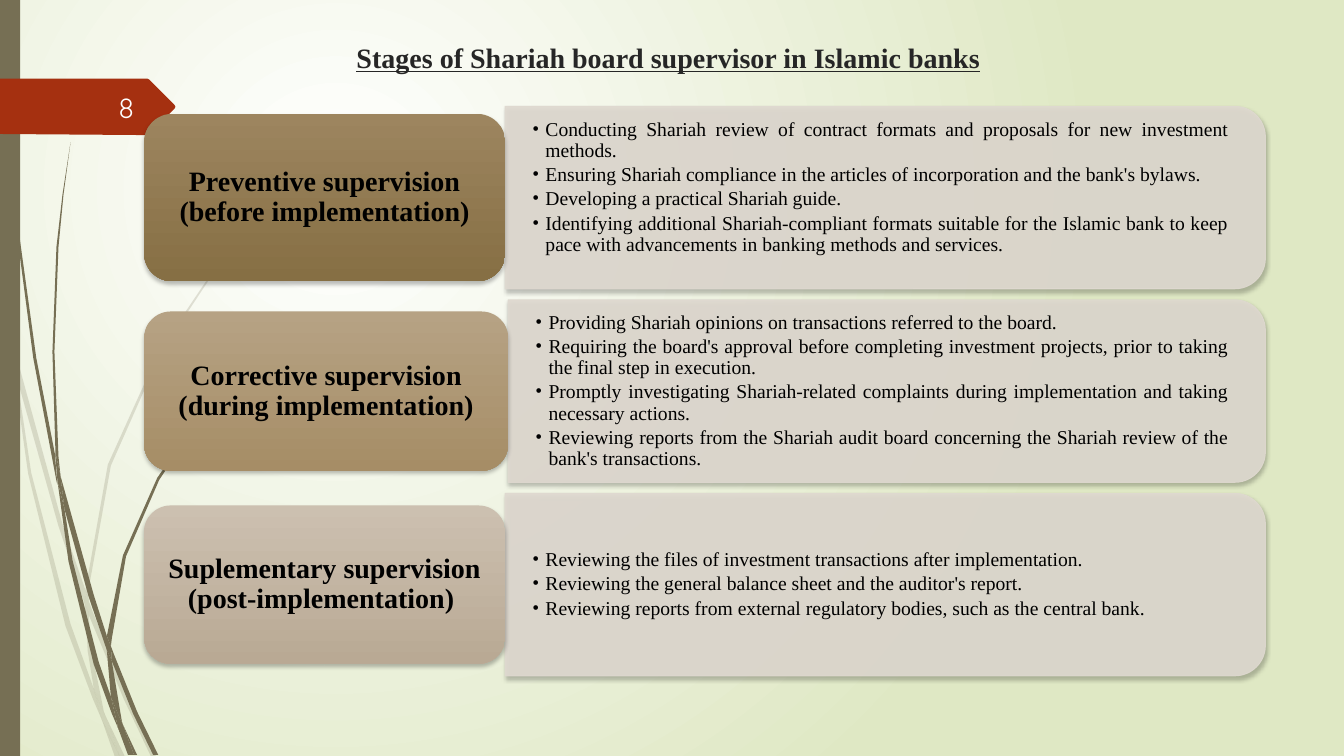
from dataclasses import dataclass
from lxml import etree
from pptx import Presentation
from pptx.dml.color import RGBColor
from pptx.enum.shapes import MSO_SHAPE
from pptx.enum.text import MSO_ANCHOR, PP_ALIGN
from pptx.oxml.ns import qn
from pptx.util import Inches, Pt

RECTANGLE, ROUNDED, TWO_ROUNDED = MSO_SHAPE.RECTANGLE, MSO_SHAPE.ROUNDED_RECTANGLE, MSO_SHAPE.ROUND_2_SAME_RECTANGLE
TOP, MIDDLE = MSO_ANCHOR.TOP, MSO_ANCHOR.MIDDLE
CENTER, RIGHT, JUSTIFY = PP_ALIGN.CENTER, PP_ALIGN.RIGHT, PP_ALIGN.JUSTIFY

BLACK, WHITE = RGBColor(0x00, 0x00, 0x00), RGBColor(0xFF, 0xFF, 0xFF)
PALE_GREEN, OLIVE = RGBColor(0xDF, 0xE8, 0xC4), RGBColor(0x76, 0x6F, 0x54)
RUST, PANEL = RGBColor(0xA5, 0x30, 0x10), RGBColor(0xDF, 0xD9, 0xD0)
NUMBER_WHITE, TITLE_GREY = RGBColor(0xFE, 0xFF, 0xFF), RGBColor(0x26, 0x26, 0x26)
BROWN, DARK_BROWN = RGBColor(0x9D, 0x85, 0x5F), RGBColor(0x86, 0x6F, 0x44)
TAN, DARK_TAN = RGBColor(0xB6, 0xA2, 0x84), RGBColor(0xA6, 0x8D, 0x66)
SAND, DARK_SAND = RGBColor(0xCC, 0xC0, 0xB0), RGBColor(0xB9, 0xA9, 0x94)

SERIF = "Times New Roman"
TITLE_FONT = {"name": SERIF, "size": Pt(20), "bold": True, "underline": True}
NUMBER_FONT = {"name": "Quicksand", "size": Pt(20)}
BADGE_FONT = {"name": SERIF, "size": Pt(20), "bold": True}
BULLET_FONT = {"name": SERIF, "size": Pt(14)}
BADGE_PARAGRAPH = {"alignment": CENTER, "line_spacing": 0.9}
BULLET_PARAGRAPH = {"alignment": JUSTIFY, "line_spacing": 0.9, "space_after": Pt(2.2)}

BADGE_LEFT, PANEL_RIGHT, TEXT_RIGHT = 1.43, 12.55, 12.46
PANEL_HEIGHT, TEXT_HEIGHT = 1.81, 1.63
FIRST_MIDDLE, STAGE_PITCH = 1.96, 1.92
Outline = list[tuple[float, float]]


@dataclass(frozen=True)
class Stage:
    heading: str
    points: list[str]
    badge_width: float
    badge_height: float
    upper: RGBColor
    lower: RGBColor
    bottom_inset: float = 0.14


STAGES = [
    Stage("Preventive supervision (before implementation)", [
        "Conducting Shariah review of contract formats and proposals for new investment methods.",
        "Ensuring Shariah compliance in the articles of incorporation and the bank's bylaws.",
        "Developing a practical Shariah guide.",
        "Identifying additional Shariah-compliant formats suitable for the Islamic bank to keep pace "
        "with advancements in banking methods and services.",
    ], 3.58, 1.66, BROWN, DARK_BROWN, 0.34),
    Stage("Corrective supervision (during implementation)", [
        "Providing Shariah opinions on transactions referred to the board.",
        "Requiring the board's approval before completing investment projects, prior to taking "
        "the final step in execution.",
        "Promptly investigating Shariah-related complaints during implementation and taking necessary actions.",
        "Reviewing reports from the Shariah audit board concerning the Shariah review of the bank's transactions.",
    ], 3.61, 1.58, TAN, DARK_TAN),
    Stage("Suplementary supervision (post-implementation) ", [
        "Reviewing the files of investment transactions after implementation.",
        "Reviewing the general balance sheet and the auditor's report.",
        "Reviewing reports from external regulatory bodies, such as the central bank.",
    ], 3.58, 1.57, SAND, DARK_SAND),
]
PALE_WISPS: list[Outline] = [
    [(0.11, 3.5), (0.09, 3.22), (0, 2.82), (0, 2.99), (0.1, 3.44)],
    [(0.58, 5.22), (0.84, 5.99), (0.85, 5.86), (0.62, 5.2), (0.14, 3.45), (0.17, 3.76)],
    [(0.92, 6.07), (0.88, 5.96), (0.88, 6.1), (1.23, 6.94), (1.5, 7.51), (1.55, 7.51), (1.27, 6.92)],
    [(1.19, 7.51), (1.24, 7.51), (1.05, 7.11)],
    [(0.93, 6.83), (0.7, 6.19), (0.31, 4.69), (0.17, 3.76), (0.11, 3.5), (0.28, 4.7), (0.65, 6.21),
     (0.92, 6.93), (1.01, 7.14), (0.99, 7.07)],
    [(0.84, 5.99), (0.87, 6.46), (0.93, 6.83), (0.96, 6.92), (1.05, 7.11), (1.03, 7.06), (0.91, 6.46),
     (0.88, 6.1), (0.88, 6.08)],
    [(0.88, 5.84), (1.1, 4.62), (1.6, 3.49), (2.29, 2.45), (2.68, 1.98), (2.9, 1.75), (3.12, 1.54), (3.12, 1.53),
     (2.89, 1.75), (2.68, 1.97), (2.28, 2.44), (1.58, 3.48), (1.07, 4.61), (0.85, 5.84), (0.85, 5.86), (0.88, 5.96)],
    [(1.01, 7.14), (1.14, 7.51), (1.19, 7.51)],
    [(0.88, 6.08), (0.88, 6.1), (0.88, 5.96), (0.85, 5.86), (0.84, 5.99)],
    [(0.96, 6.92), (0.93, 6.83), (0.99, 7.07), (1.01, 7.14), (1.19, 7.51), (1.05, 7.11)],
]
DARK_WISPS: list[Outline] = [
    [(0.07, 1.1), (0.17, 2.33), (0.33, 3.55), (0.56, 4.77), (0.57, 4.81), (0.55, 4.57), (0.55, 4.53),
     (0.36, 3.55), (0.19, 2.32), (0.08, 1.09), (0.05, 0.48), (0.04, 0), (0.03, 0), (0.04, 0.48)],
    [(0.88, 5.92), (1.06, 6.45), (1.06, 6.31), (0.93, 5.9), (0.6, 4.72), (0.64, 5.05)],
    [(1.13, 6.49), (1.1, 6.41), (1.11, 6.56), (1.32, 7.08), (1.52, 7.49), (1.57, 7.49), (1.36, 7.06)],
    [(1.1, 6.91), (0.98, 6.57), (0.72, 5.56), (0.64, 5.05), (0.57, 4.77), (0.68, 5.57), (0.93, 6.59),
     (1.11, 7.08), (1.17, 7.22), (1.16, 7.17)],
    [(0.6, 4.72), (0.58, 4.53), (0.54, 3.49), (0.58, 2.45), (0.63, 1.93), (0.7, 1.41), (0.62, 1.93),
     (0.56, 2.45), (0.52, 3.49), (0.55, 4.49)],
    [(1.33, 7.49), (1.36, 7.49), (1.22, 7.19)],
    [(0.57, 4.77), (0.64, 5.05), (0.6, 4.72), (0.55, 4.49), (0.55, 4.53)],
    [(1.11, 6.33), (1.25, 5.52), (1.58, 4.76), (2.05, 4.06), (2.31, 3.74), (2.45, 3.59), (2.61, 3.44), (2.6, 3.44),
     (2.45, 3.58), (2.31, 3.73), (2.04, 4.05), (1.56, 4.74), (1.22, 5.51), (1.06, 6.31), (1.1, 6.41)],
    [(1.17, 7.22), (1.27, 7.49), (1.31, 7.49)],
    [(1.06, 6.45), (1.1, 6.91), (1.16, 7.06), (1.22, 7.19), (1.21, 7.16), (1.11, 6.56), (1.09, 6.51)],
    [(1.06, 6.45), (1.09, 6.51), (1.11, 6.56), (1.1, 6.41), (1.06, 6.31)],
    [(1.16, 7.06), (1.1, 6.91), (1.16, 7.17), (1.17, 7.22), (1.3, 7.49), (1.33, 7.49), (1.22, 7.19)],
]
RIBBON: Outline = [(0, 0.78), (1.46, 0.78), (1.48, 0.79), (1.73, 1.04), (1.74, 1.06), (1.73, 1.08), (1.48, 1.33),
                   (1.46, 1.34), (1.36, 1.34), (0, 1.33)]


def apply(target, values: dict) -> None:
    for name, value in values.items():
        setattr(target, name, value)


def set_opacity(box, percent: int) -> None:
    for color in box.element.spPr.iter(qn("a:srgbClr")):
        etree.SubElement(color, qn("a:alpha"), val=str(percent * 1000))


def paint(box, color: RGBColor) -> None:
    box.shadow.inherit = False
    box.fill.solid()
    box.fill.fore_color.rgb = color
    box.line.fill.background()


def add_outline(page, outline: Outline, color: RGBColor):
    points = [(Inches(x), Inches(y)) for x, y in outline]
    builder = page.shapes.build_freeform(*points[0], scale=1.0)
    builder.add_line_segments(points[1:], close=True)
    box = builder.convert_to_shape()
    paint(box, color)
    return box


def cast_shadow(box) -> None:
    box.shadow.inherit = False
    shadow = etree.SubElement(box.element.spPr.find(qn("a:effectLst")), qn("a:outerShdw"), blurRad=str(Pt(3)),
                              dist=str(Pt(2)), dir="5400000", rotWithShape="0")
    color = etree.SubElement(shadow, qn("a:srgbClr"), val=str(BLACK))
    etree.SubElement(color, qn("a:alpha"), val="25000")


def set_gradient(fill, first: RGBColor, last: RGBColor) -> None:
    fill.gradient()
    for stop, color in zip(fill.gradient_stops, (first, last)):
        stop.color.rgb = color


def paint_background(page) -> None:
    set_gradient(page.background.fill, WHITE, PALE_GREEN)
    gradient = page.element.find(".//" + qn("a:gradFill"))
    gradient.remove(gradient.find(qn("a:lin")))
    circle = etree.SubElement(gradient, qn("a:path"), path="circle")
    etree.SubElement(circle, qn("a:fillToRect"), l="50000", t="50000", r="100000", b="100000")


def set_frame(box, anchor, side: float = 0.1, top: float = 0.05, bottom: float = 0.05) -> None:
    apply(box.text_frame, {"word_wrap": True, "vertical_anchor": anchor, "margin_left": Inches(side),
                           "margin_right": Inches(side), "margin_top": Inches(top), "margin_bottom": Inches(bottom)})


def write(para, text: str, font: dict, color: RGBColor, layout: dict) -> None:
    apply(para, layout)
    span = para.add_run()
    span.text = text
    apply(span.font, font)
    span.font.color.rgb = color


def add_bullet(para) -> None:
    properties = para._p.get_or_add_pPr()
    properties.set("marL", str(Inches(0.13)))
    properties.set("indent", str(-Inches(0.13)))
    etree.SubElement(properties, qn("a:buFont"), typeface=SERIF)
    etree.SubElement(properties, qn("a:buChar"), char="•")


def add_stage(page, stage: Stage, middle: float) -> None:
    left = BADGE_LEFT + stage.badge_width
    length = PANEL_RIGHT - left
    panel = page.shapes.add_shape(TWO_ROUNDED, Inches((left + PANEL_RIGHT - PANEL_HEIGHT) / 2),
                                  Inches(middle - length / 2), Inches(PANEL_HEIGHT), Inches(length))
    panel.rotation = 90
    paint(panel, PANEL)
    panel.line.color.rgb = PANEL
    panel.line.width = Pt(0.75)
    set_opacity(panel, 90)
    cast_shadow(panel)
    body = page.shapes.add_textbox(Inches(left), Inches(middle - TEXT_HEIGHT / 2),
                                   Inches(TEXT_RIGHT - left), Inches(TEXT_HEIGHT))
    set_frame(body, MIDDLE, 0.27, 0.14, stage.bottom_inset)
    for i, point in enumerate(stage.points):
        para = body.text_frame.add_paragraph() if i else body.text_frame.paragraphs[0]
        write(para, point, BULLET_FONT, BLACK, BULLET_PARAGRAPH)
        add_bullet(para)
    badge = page.shapes.add_shape(ROUNDED, Inches(BADGE_LEFT), Inches(middle - stage.badge_height / 2),
                                  Inches(stage.badge_width), Inches(stage.badge_height))
    set_gradient(badge.fill, stage.upper, stage.lower)
    badge.fill.gradient_angle = 270
    badge.line.fill.background()
    cast_shadow(badge)
    set_frame(badge, MIDDLE, 0.16, 0.12, 0.12)
    write(badge.text_frame.paragraphs[0], stage.heading, BADGE_FONT, BLACK, BADGE_PARAGRAPH)


def main() -> None:
    deck = Presentation()
    deck.slide_width, deck.slide_height = Inches(13.33), Inches(7.5)
    page = deck.slides.add_slide(deck.slide_layouts[5])
    paint_background(page)
    for outline in PALE_WISPS:
        set_opacity(add_outline(page, outline, OLIVE), 20)
    for outline in DARK_WISPS:
        add_outline(page, outline, OLIVE)
    paint(page.shapes.add_shape(RECTANGLE, 0, 0, Inches(0.2), deck.slide_height), OLIVE)
    add_outline(page, RIBBON, RUST)
    title = page.shapes.title
    apply(title, {"left": Inches(0.88), "top": Inches(0.35), "width": Inches(11.5), "height": Inches(0.51)})
    set_frame(title, TOP)
    write(title.text_frame.paragraphs[0], "Stages of Shariah board supervisor in Islamic banks",
          TITLE_FONT, TITLE_GREY, {"alignment": CENTER})
    number = page.shapes.add_textbox(Inches(0.58), Inches(0.86), Inches(0.85), Inches(0.4))
    set_frame(number, MIDDLE)
    write(number.text_frame.paragraphs[0], "8", NUMBER_FONT, NUMBER_WHITE, {"alignment": RIGHT})
    for i, stage in enumerate(STAGES):
        add_stage(page, stage, FIRST_MIDDLE + i * STAGE_PITCH)
    deck.save("out.pptx")


if __name__ == "__main__":
    main()
